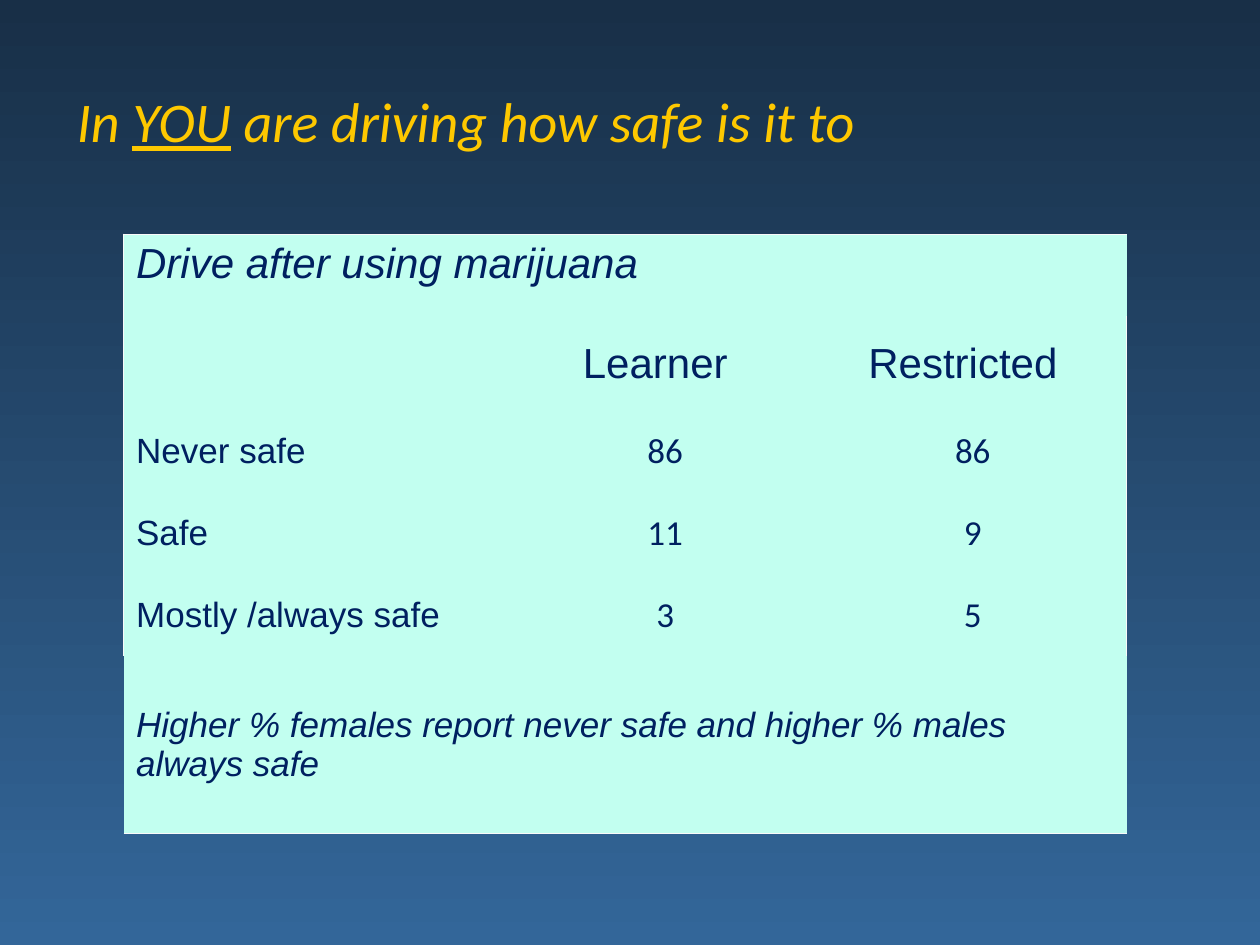
import pptx
import pptx.dml.color
import pptx.enum.text
import pptx.oxml
import pptx.oxml.ns
import pptx.util

Cm = pptx.util.Cm
Pt = pptx.util.Pt
ALIGN = pptx.enum.text.PP_ALIGN
ANCHOR = pptx.enum.text.MSO_ANCHOR

COLORS = {
    "sky_top": "182F47",
    "sky_bottom": "336699",
    "title": "FEC800",
    "text": "002060",
    "cell": "C2FFF0",
    "border": "F9F9F9",
}
COLUMN_WIDTHS = [7.82, 6.2, 6.2]
ROW_HEIGHTS = [1.65, 1.9, 1.65, 1.65, 1.65, 3.58]
HEADINGS = ["Learner", "Restricted"]
ANSWERS = [
    ("Never safe", 86, 86),
    ("Safe", 11, 9),
    ("Mostly /always safe", 3, 5),
]
CAPTION = "Drive after using marijuana"
FINDING = "Higher % females report never safe and higher % males always safe"


def rgb(name):
    return pptx.dml.color.RGBColor.from_string(COLORS[name])


def add_text(paragraph, text, size=20, font="Arial", color="text",
             italic=False, underline=False, align=ALIGN.LEFT):
    paragraph.alignment = align
    run = paragraph.add_run()
    run.text = text
    run.font.size = Pt(size)
    run.font.name = font
    run.font.italic = italic
    run.font.underline = underline
    run.font.color.rgb = rgb(color)


def set_borders(cell, visible):
    """Draw the sides of the cell named in visible (L, R, T, B), clear the rest."""
    properties = cell._tc.get_or_add_tcPr()
    for index, side in enumerate("LRTB"):
        paint = "<a:noFill/>"
        if side in visible:
            paint = f'<a:solidFill><a:srgbClr val="{COLORS["border"]}"/></a:solidFill>'
        line = pptx.oxml.parse_xml(
            f'<a:ln{side} {pptx.oxml.ns.nsdecls("a")} w="{Pt(0.75)}">{paint}</a:ln{side}>')
        properties.insert(index, line)


def style_cells(table):
    last_row, last_column = len(table.rows) - 1, len(table.columns) - 1
    for row in range(last_row + 1):
        for column in range(last_column + 1):
            cell = table.cell(row, column)
            cell.fill.solid()
            cell.fill.fore_color.rgb = rgb("cell")
            cell.vertical_anchor = ANCHOR.MIDDLE if row else ANCHOR.TOP
            sides = ""
            if row == 0:
                sides += "T"
            if row == last_row:
                sides += "B"
            else:
                sides += {0: "L", last_column: "R"}.get(column, "")
            set_borders(cell, sides)


def add_centred(cell, text, right=0.03, **text_format):
    cell.margin_left = cell.margin_top = Cm(0.03)
    cell.margin_right, cell.margin_bottom = Cm(right), 0
    add_text(cell.text_frame.paragraphs[0], text, align=ALIGN.CENTER, **text_format)


def add_title(slide, left, top, width, height):
    frame = slide.shapes.add_textbox(Cm(left), Cm(top), Cm(width), Cm(height)).text_frame
    frame.word_wrap = True
    frame.vertical_anchor = ANCHOR.MIDDLE
    for text, underline in [("In ", False), ("YOU", True),
                            (" are driving how safe is it to", False)]:
        add_text(frame.paragraphs[0], text, size=32, font="Calibri",
                 color="title", italic=True, underline=underline)


def add_survey_table(slide, left, top):
    table = slide.shapes.add_table(
        len(ROW_HEIGHTS), len(COLUMN_WIDTHS), Cm(left), Cm(top),
        Cm(sum(COLUMN_WIDTHS)), Cm(sum(ROW_HEIGHTS))).table
    table.first_row = table.horz_banding = False
    for column, width in zip(table.columns, COLUMN_WIDTHS):
        column.width = Cm(width)
    for row, height in zip(table.rows, ROW_HEIGHTS):
        row.height = Cm(height)
    style_cells(table)

    last_row = len(ROW_HEIGHTS) - 1
    for row, text, size in [(0, CAPTION, 24), (last_row, FINDING, 20)]:
        cell = table.cell(row, 0)
        cell.merge(table.cell(row, len(COLUMN_WIDTHS) - 1))
        add_text(cell.text_frame.paragraphs[0], text, size=size, italic=True)
    for column, heading in enumerate(HEADINGS, 1):
        add_centred(table.cell(1, column), heading, right=0.43, size=24)
    for row, (answer, *percentages) in enumerate(ANSWERS, 2):
        add_text(table.cell(row, 0).text_frame.paragraphs[0], answer)
        for column, percentage in enumerate(percentages, 1):
            add_centred(table.cell(row, column), str(percentage), font="Calibri")


def paint_background(slide):
    fill = slide.background.fill
    fill.gradient()
    fill.gradient_angle = 270
    for stop, name in zip(fill.gradient_stops, ["sky_top", "sky_bottom"]):
        stop.color.rgb = rgb(name)


def main():
    presentation = pptx.Presentation()
    presentation.slide_width = Cm(25.4)
    presentation.slide_height = Cm(19.05)
    slide = presentation.slides.add_slide(presentation.slide_layouts[6])
    paint_background(slide)
    add_title(slide, 1.3, 0.84, 22.8, 3.18)
    add_survey_table(slide, 2.49, 4.72)
    presentation.save("out.pptx")


if __name__ == "__main__":
    main()
